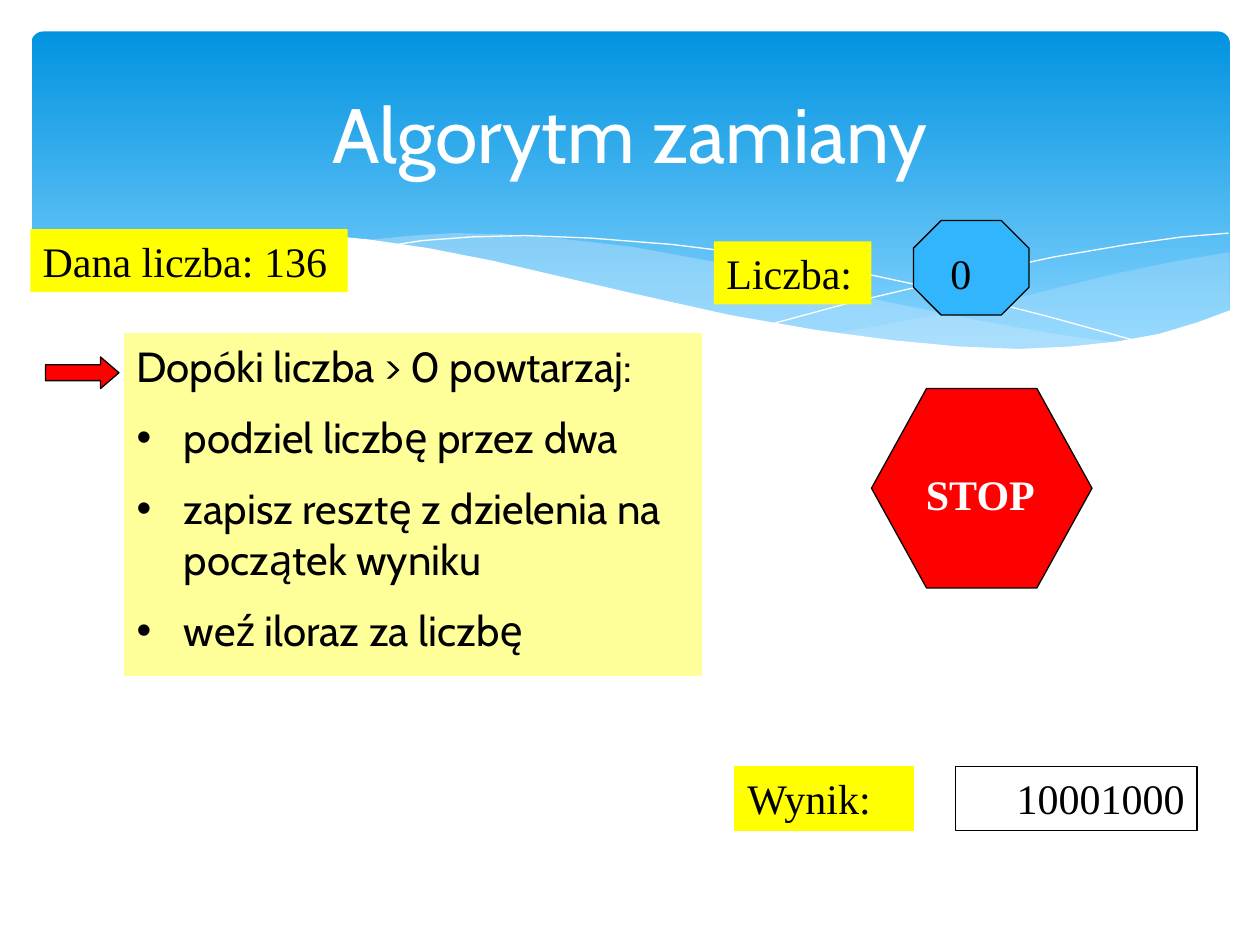
from dataclasses import dataclass
from typing import Optional

from lxml.etree import SubElement
from pptx import Presentation
from pptx.dml.color import RGBColor
from pptx.enum.shapes import MSO_SHAPE
from pptx.enum.text import MSO_ANCHOR, PP_ALIGN
from pptx.oxml.ns import qn
from pptx.util import Pt

COLORS = {
    "sky": "0293E0", "pale_sky": "83D3FE", "mist": "C6E7FC", "blue": "31B6FD",
    "white": "FFFFFF", "black": "000000", "red": "FF0000",
    "yellow": "FFFF00", "cream": "FFFF99",
}
SANS, SERIF = "Cabin", "Times New Roman"
BULLET_INDENT = Pt(27)


@dataclass
class Wave:
    points: list[tuple[float, float]]
    fill: Optional[str] = None
    opacity: int = 100


@dataclass
class Box:
    left: float
    top: float
    width: float
    height: float
    lines: tuple[str, ...] = ()
    kind: Optional[MSO_SHAPE] = MSO_SHAPE.RECTANGLE  # None is a text box
    fill: Optional[str] = None
    line: Optional[str] = None
    adjustments: tuple[float, ...] = ()
    font: str = SERIF
    size: float = 24
    color: str = "black"
    bold: bool = False
    align: PP_ALIGN = PP_ALIGN.LEFT
    anchor: MSO_ANCHOR = MSO_ANCHOR.TOP


def rgb(name: str) -> RGBColor:
    return RGBColor.from_string(COLORS[name])


def paint(shape, fill: Optional[str], line: Optional[str], line_width: float = 0.75) -> None:
    if fill:
        shape.fill.solid()
        shape.fill.fore_color.rgb = rgb(fill)
    else:
        shape.fill.background()
    if line:
        shape.line.color.rgb = rgb(line)
        shape.line.width = Pt(line_width)
    else:
        shape.line.fill.background()


def draw_wave(slide, wave: Wave) -> None:
    """Draw a filled band, or a white hairline when there is no fill."""
    start, *rest = [(Pt(x), Pt(y)) for x, y in wave.points]
    builder = slide.shapes.build_freeform(*start)
    builder.add_line_segments(rest, close=wave.fill is not None)
    shape = builder.convert_to_shape()
    shape.shadow.inherit = False
    paint(shape, wave.fill, None if wave.fill else "white", 0)
    if wave.opacity < 100:
        color = shape._element.spPr.find(qn("a:solidFill")).find(qn("a:srgbClr"))
        SubElement(color, qn("a:alpha")).set("val", str(wave.opacity * 1000))


def add_bullet(paragraph) -> None:
    properties = paragraph._p.get_or_add_pPr()
    properties.set("marL", str(BULLET_INDENT))
    properties.set("indent", str(-BULLET_INDENT))
    SubElement(properties, qn("a:buFont")).set("typeface", "Arial")
    SubElement(properties, qn("a:buChar")).set("char", "•")


def draw_box(slide, box: Box) -> None:
    """Draw a shape or text box; every line after the first is a bullet."""
    place = [Pt(value) for value in (box.left, box.top, box.width, box.height)]
    if box.kind is None:
        shape = slide.shapes.add_textbox(*place)
    else:
        shape = slide.shapes.add_shape(box.kind, *place)
        shape.shadow.inherit = False
        paint(shape, box.fill, box.line)
        for index, value in enumerate(box.adjustments):
            shape.adjustments[index] = value
    frame = shape.text_frame
    frame.word_wrap = True
    frame.vertical_anchor = box.anchor
    for index, text in enumerate(box.lines):
        paragraph = frame.add_paragraph() if index else frame.paragraphs[0]
        paragraph.text = text
        paragraph.alignment = box.align
        if index:
            paragraph.space_before = Pt(12)
            add_bullet(paragraph)
        font = paragraph.font
        font.name, font.size, font.bold = box.font, Pt(box.size), box.bold
        font.color.rgb = rgb(box.color)


def draw_banner(slide) -> None:
    banner = slide.shapes.add_shape(
        MSO_SHAPE.ROUNDED_RECTANGLE, Pt(18), Pt(18), Pt(684.7), Pt(194.4))
    banner.adjustments[0] = 0.034
    banner.shadow.inherit = False
    banner.line.fill.background()
    banner.fill.gradient()
    banner.fill.gradient_angle = 270
    stops = banner.fill.gradient_stops
    for stop, name, position in zip(stops, ("sky", "pale_sky"), (0, 0.9)):
        stop.color.rgb = rgb(name)
        stop.position = position


WAVES = [
    # Right band
    Wave([(702.7, 144), (673.2, 149), (641.5, 155.5), (619.9, 160.6), (579.6, 170.6),
          (542.2, 178.6), (508.3, 185), (475.9, 190.8), (497.5, 193.7), (527, 197.3),
          (553.7, 199.4), (586, 200.2), (614.9, 198.7), (640, 195.8), (663, 190.8),
          (683.3, 185), (702.7, 177.8)], "mist", 29),
    # Middle band
    Wave([(643, 196.6), (602.6, 190.8), (558, 182.9), (508.3, 172.8), (452.9, 159.8),
          (420.5, 151.9), (389.5, 146.2), (361.4, 141.1), (318.2, 136.1), (287.3, 133.9),
          (259.9, 133.2), (236.2, 134.6), (205.9, 137.5), (246.2, 143.3), (290.9, 151.9),
          (323.3, 159.8), (381.6, 172.8), (432.7, 183.6), (478.8, 191.5), (519.8, 197.3),
          (556.6, 199.4), (589, 200.2), (617, 199.4)], "mist", 40),
    # Hairlines
    Wave([(222.5, 140.4), (241.2, 137.5), (269.3, 135.4), (299.5, 134.6), (337.7, 136.1),
          (383.8, 139.7), (419, 144), (457.9, 149.8), (500.4, 157.7), (547.2, 167.8),
          (598.3, 180.7), (653, 195.8)]),
    Wave([(441.4, 185), (483.8, 173.5), (538.6, 160.6), (601.9, 146.9), (644.4, 139.7),
          (675.4, 135.4), (702, 133.2)]),
    # White lower edge
    Wave([(703.4, 177.1), (684, 184.3), (662.4, 190.8), (638.6, 195.1), (612, 198),
          (582.5, 199.4), (547.9, 198), (509.8, 194.4), (466.6, 188.6), (416.9, 180),
          (362.2, 167.8), (321.8, 158.4), (281.5, 149), (244.8, 141.8), (210.2, 136.8),
          (180, 133.9), (151.9, 132.5), (115.9, 132.5), (85.7, 134.6), (61.2, 139),
          (37.4, 144.7), (16.6, 153.4), (16.6, 236.9), (703.4, 236.9)], "white"),
]

BOXES = [
    # Title
    Box(36, 26.6, 648, 98.6, ("Algorytm zamiany",), kind=None, font=SANS, size=44,
        color="white", align=PP_ALIGN.CENTER, anchor=MSO_ANCHOR.MIDDLE),
    # Current number
    Box(408, 138, 90, 36, ("Liczba:",), fill="yellow"),
    Box(522, 126, 66, 54, kind=MSO_SHAPE.OCTAGON, fill="blue", line="black",
        adjustments=(0.293,)),
    Box(536, 138, 58, 36, ("0",), kind=None),
    # Result
    Box(420, 438, 102, 36.5, ("Wynik:",), fill="yellow", line="yellow"),
    Box(546, 438, 138, 36.5, ("10001000",), fill="white", line="black",
        align=PP_ALIGN.RIGHT),
    # Step pointer
    Box(26, 204, 42, 18, kind=MSO_SHAPE.RIGHT_ARROW, fill="red", line="black",
        adjustments=(0.5, 0.583)),
    # Stop sign
    Box(498, 222, 126, 114, kind=MSO_SHAPE.HEXAGON, fill="red", line="black",
        adjustments=(0.276, 1.155)),
    Box(522, 264, 90, 36, ("STOP",), kind=None, color="white", bold=True),
    # Algorithm steps
    Box(71, 190.8, 330, 195,
        ("Dopóki liczba > 0 powtarzaj:", "podziel liczbę przez dwa",
         "zapisz resztę z dzielenia na początek wyniku", "weź iloraz za liczbę"),
        fill="cream", line="cream", font=SANS),
    # Input number
    Box(17.3, 131, 181.4, 36, ("Dana liczba: 136",), fill="yellow"),
]


def main() -> None:
    presentation = Presentation()
    presentation.slide_width, presentation.slide_height = Pt(720), Pt(540)
    slide = presentation.slides.add_slide(presentation.slide_layouts[6])
    draw_banner(slide)
    for wave in WAVES:
        draw_wave(slide, wave)
    for box in BOXES:
        draw_box(slide, box)
    presentation.save("out.pptx")


if __name__ == "__main__":
    main()
